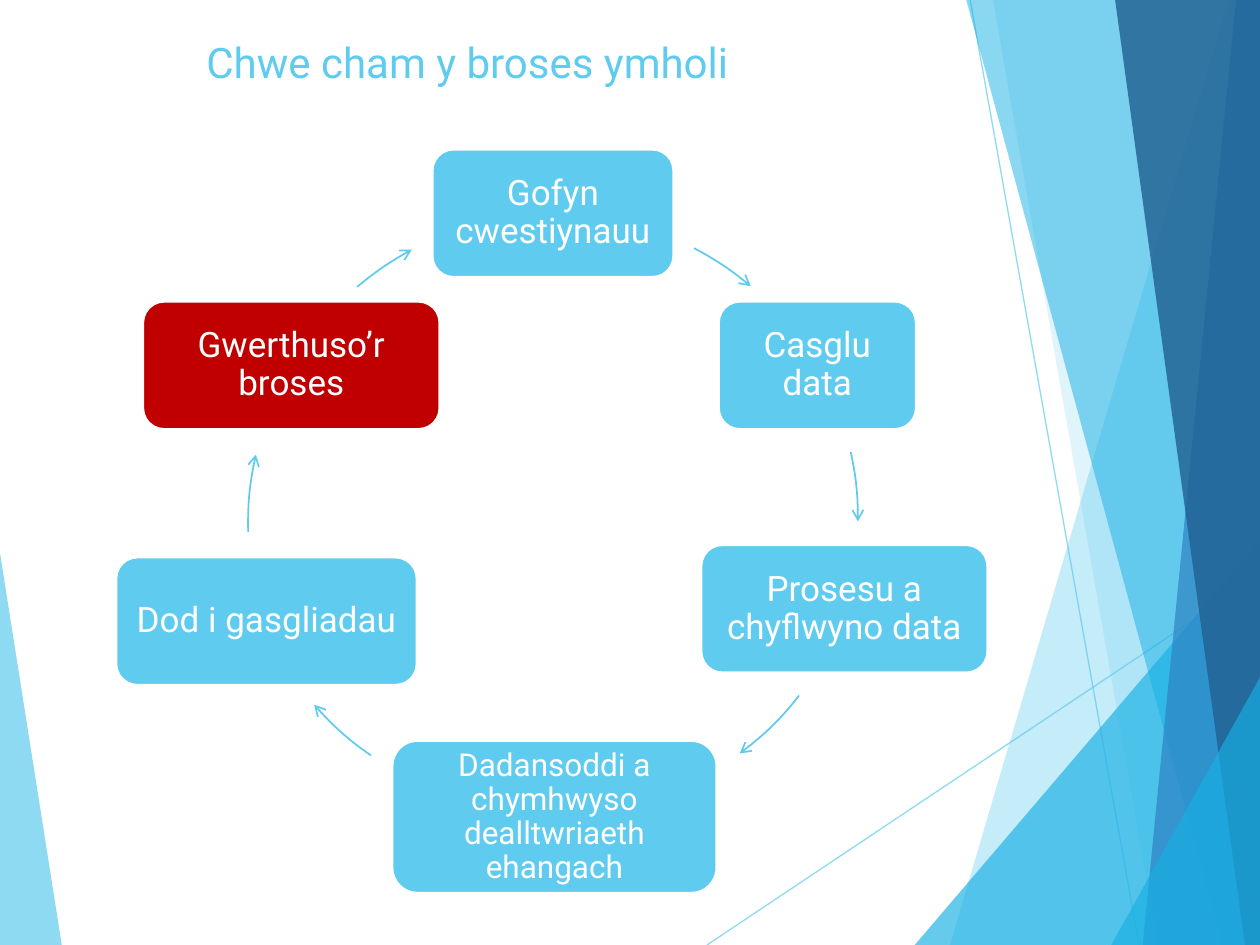
"""Build the slide on the six steps of the enquiry process, drawn as a cycle."""
import lxml.etree
import pptx
import pptx.dml.color
import pptx.enum.shapes
import pptx.enum.text
import pptx.oxml.ns
import pptx.util

Pt = pptx.util.Pt
qn = pptx.oxml.ns.qn
PRESET = pptx.enum.shapes.MSO_SHAPE

THEME = {
    "font": "Roboto", "title_size": 24, "step_size": 20, "small_size": 18,
    "sky": "5FCBEF", "cyan": "17B0E4", "blue": "2E83C3", "navy": "226292",
    "red": "C00000", "white": "FFFFFF",
}
WIDTH, HEIGHT = 720, 540
TITLE = ("Chwe cham y broses ymholi", (110.9, 17.3, 499.7, 103.7))

# text, box, fill, type size
STEPS = [
    ("Gofyn cwestiynauu", (247, 85.3, 138, 73.2), "sky", "step_size"),
    ("Casglu data", (410.6, 172.2, 113, 73.2), "sky", "step_size"),
    ("Prosesu a chyflwyno data", (400.6, 311.3, 163.8, 73.2), "sky", "step_size"),
    ("Dadansoddi a chymhwyso dealltwriaeth ehangach", (224.1, 423.2, 185.5, 87.2), "sky", "small_size"),
    ("Dod i gasgliadau", (66.3, 318.4, 172, 73.2), "sky", "step_size"),
    ("Gwerthuso’r broses", (81.6, 172.2, 169.7, 73.2), "red", "step_size"),
]
RING = 347
# ring left and top, start and end angle in degrees
ARROWS = [
    ((143.3, 122.4), (297.4, 310.3)),
    ((143.3, 122.4), (347.5, 0.7)),
    ((146.2, 117.4), (37.9, 53.6)),
    ((136.8, 115.2), (124.5, 138.9)),
    ((141.8, 125.3), (178.3, 193)),
    ((143.3, 122.4), (229.5, 242)),
]
LEFT_WING = ([(0, 316), (35.3, HEIGHT), (0, HEIGHT)], "sky", 70)
RAYS = [((404, HEIGHT), (WIDTH, 329)), ((554.4, 0), (650.9, HEIGHT))]
RAY_OPACITY = 70
FACETS = [
    ([(702, 0), (542.9, HEIGHT), (WIDTH, HEIGHT), (WIDTH, 0)], "sky", 36),
    ([(567.4, 0), (661.7, HEIGHT), (WIDTH, HEIGHT), (WIDTH, 0)], "sky", 20),
    ([(522.7, HEIGHT), (WIDTH, 309), (WIDTH, HEIGHT)], "cyan", 66),
    ([(552.2, 0), (698.4, HEIGHT), (WIDTH, HEIGHT), (WIDTH, 0)], "cyan", 50),
    ([(706.3, 0), (653, HEIGHT), (WIDTH, HEIGHT), (WIDTH, 0)], "blue", 70),
    ([(637.2, 0), (711.4, HEIGHT), (WIDTH, HEIGHT), (WIDTH, 0)], "navy", 82),
    ([(635, HEIGHT), (WIDTH, 387), (WIDTH, HEIGHT)], "cyan", 66),
]


def points(values):
    return [Pt(value) for value in values]


def paint(fill, colour, opacity=100):
    fill.solid()
    fill.fore_color.rgb = pptx.dml.color.RGBColor.from_string(THEME[colour])
    return opacity


def fade(part, opacity):
    for colour in part._element.spPr.iter(qn("a:srgbClr")):
        lxml.etree.SubElement(colour, qn("a:alpha"), val=str(opacity * 1000))


def outline(part, colour, weight):
    paint(part.line.fill, colour)
    part.line.width = Pt(weight)


def write(frame, text, colour, size):
    frame.word_wrap = True
    run = frame.paragraphs[0].add_run()
    run.text = text
    run.font.name = THEME["font"]
    run.font.size = Pt(THEME[size])
    paint(run.font.fill, colour)
    return frame.paragraphs[0]


def add_facet(shapes, corners, colour, opacity):
    start, *rest = [points(corner) for corner in corners]
    builder = shapes.build_freeform(*start)
    builder.add_line_segments(rest, close=True)
    facet = builder.convert_to_shape()
    facet.shadow.inherit = False
    paint(facet.fill, colour)
    facet.line.fill.background()
    fade(facet, opacity)


def add_ray(shapes, start, end):
    ray = shapes.add_connector(
        pptx.enum.shapes.MSO_CONNECTOR.STRAIGHT, *points(start + end))
    outline(ray, "sky", 0.75)
    fade(ray, RAY_OPACITY)
    lxml.etree.SubElement(ray._element.spPr, qn("a:effectLst"))


def add_step(shapes, text, box, colour, size):
    step = shapes.add_shape(PRESET.ROUNDED_RECTANGLE, *points(box))
    step.shadow.inherit = False
    paint(step.fill, colour)
    outline(step, "white", 1.5)
    frame = step.text_frame
    frame.margin_left = frame.margin_right = Pt(5.7)
    frame.margin_top = frame.margin_bottom = Pt(5.7)
    frame.vertical_anchor = pptx.enum.text.MSO_ANCHOR.MIDDLE
    paragraph = write(frame, text, "white", size)
    paragraph.alignment = pptx.enum.text.PP_ALIGN.CENTER
    paragraph.line_spacing = 0.9


def add_arrow(shapes, corner, angles):
    arrow = shapes.add_shape(PRESET.ARC, *points(corner + (RING, RING)))
    arrow.shadow.inherit = False
    for index, angle in enumerate(angles):
        arrow.adjustments[index] = angle * 0.6
    arrow.fill.background()
    outline(arrow, "sky", 1)
    line = arrow._element.spPr.find(qn("a:ln"))
    lxml.etree.SubElement(line, qn("a:tailEnd"), type="arrow")


def main():
    deck = pptx.Presentation()
    deck.slide_width, deck.slide_height = points((WIDTH, HEIGHT))
    shapes = deck.slides.add_slide(deck.slide_layouts[6]).shapes
    add_facet(shapes, *LEFT_WING)
    for ray in RAYS:
        add_ray(shapes, *ray)
    for facet in FACETS:
        add_facet(shapes, *facet)
    for step, arrow in zip(STEPS, ARROWS):
        add_step(shapes, *step)
        add_arrow(shapes, *arrow)
    text, box = TITLE
    write(shapes.add_textbox(*points(box)).text_frame, text, "sky", "title_size")
    deck.save("out.pptx")


if __name__ == "__main__":
    main()
